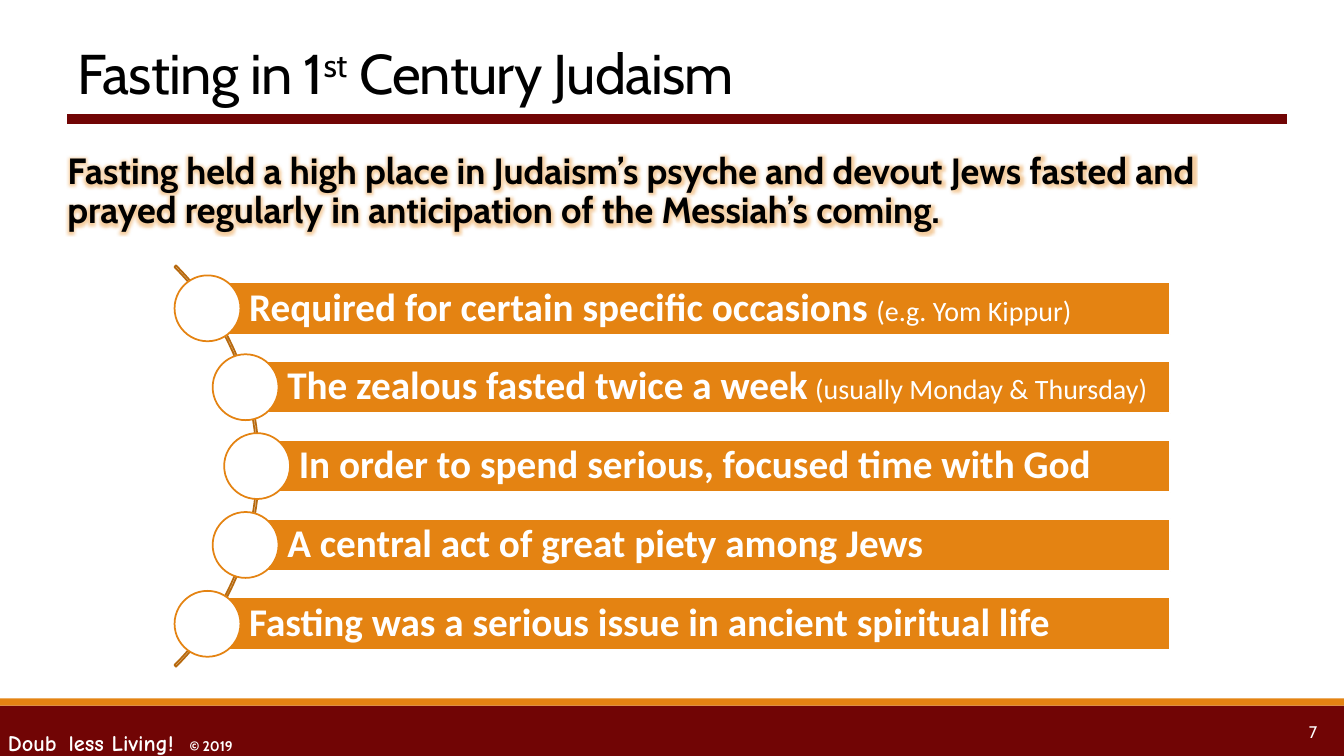
from lxml import etree
from pptx import Presentation
from pptx.dml.color import RGBColor
from pptx.enum.shapes import MSO_CONNECTOR, MSO_SHAPE
from pptx.enum.text import MSO_ANCHOR, PP_ALIGN
from pptx.oxml.ns import qn
from pptx.util import Cm, Pt

RECTANGLE, OVAL, ARC = MSO_SHAPE.RECTANGLE, MSO_SHAPE.OVAL, MSO_SHAPE.BLOCK_ARC
STRAIGHT = MSO_CONNECTOR.STRAIGHT
TOP, MIDDLE, BOTTOM = MSO_ANCHOR.TOP, MSO_ANCHOR.MIDDLE, MSO_ANCHOR.BOTTOM
LEFT, RIGHT = PP_ALIGN.LEFT, PP_ALIGN.RIGHT

MAROON, ORANGE, BROWN = "710505", "E48312", "B7690E"
WHITE, BLACK = "FFFFFF", "000000"
SLIDE_WIDTH, SLIDE_HEIGHT = 33.87, 19.05

# Each practice: bold statement, size of the gap, smaller remark
PRACTICES = [
    ("Required for certain specific occasions", 28, "(e.g. Yom Kippur)"),
    ("The zealous fasted twice a week", 24, "(usually Monday & Thursday)"),
    ("In order to spend serious, focused time with God", None, None),
    ("A central act of great piety among Jews", None, None),
    ("Fasting was a serious issue in ancient spiritual life", None, None),
]
CURVE_OFFSETS = [0, 0.96, 1.25, 0.96, 0]


def color(hex_string):
    return RGBColor.from_string(hex_string)


def add_shape(slide, kind, box, fill=None, line=None):
    shape = slide.shapes.add_shape(kind, *map(Cm, box))
    shape.shadow.inherit = False
    if fill:
        shape.fill.solid()
        shape.fill.fore_color.rgb = color(fill)
    else:
        shape.fill.background()
    if line:
        shape.line.color.rgb = color(line)
        shape.line.width = Pt(1.25)
    else:
        shape.line.fill.background()
    return shape


def format_frame(shape, anchor, margins=(0.25, 0.13, 0.25, 0.13)):
    """Set anchor and margins (left, top, right, bottom); return the first paragraph."""
    frame = shape.text_frame
    frame.word_wrap = True
    frame.vertical_anchor = anchor
    (frame.margin_left, frame.margin_top,
     frame.margin_right, frame.margin_bottom) = map(Cm, margins)
    return frame.paragraphs[0]


def set_font(paragraph, name, size, font_color, bold=False, align=LEFT, spacing=1.0):
    paragraph.alignment = align
    paragraph.line_spacing = spacing
    font = paragraph.font
    font.name, font.size, font.bold = name, Pt(size), bold
    font.color.rgb = color(font_color)


def add_run(paragraph, text, size=None, bold=None, name=None):
    run = paragraph.add_run()
    run.text = text
    run.font.size = Pt(size) if size else None
    run.font.bold = bold
    run.font.name = name
    return run


def add_text_box(slide, box, anchor, **frame_options):
    return format_frame(slide.shapes.add_textbox(*map(Cm, box)), anchor, **frame_options)


def add_glow(run, glow_color, radius, opacity):
    effects = etree.SubElement(run.font._element, qn("a:effectLst"))
    glow = etree.SubElement(effects, qn("a:glow"), rad=str(Pt(radius)))
    tint = etree.SubElement(glow, qn("a:srgbClr"), val=glow_color)
    etree.SubElement(tint, qn("a:alpha"), val=str(opacity * 1000))


def add_tab_stop(paragraph, position):
    stops = etree.SubElement(paragraph._p.get_or_add_pPr(), qn("a:tabLst"))
    etree.SubElement(stops, qn("a:tab"), pos=str(Cm(position)), algn="l")


def add_footer(slide, box):
    left, top, width, height = box
    stripe = 0.18
    add_shape(slide, RECTANGLE, (left, top + stripe, width, height - stripe), MAROON)
    add_shape(slide, RECTANGLE, (left, top, width, stripe), ORANGE)

    credit = add_text_box(slide, (left - 0.05, top + 0.36, 9.96, 1.27), TOP)
    add_tab_stop(credit, 4.58)
    set_font(credit, "Comic Neue", 16, WHITE, bold=True)
    add_run(credit, "Doub")
    add_run(credit, " ", 24)
    add_run(credit, "less Living!\t")
    add_run(credit, "© 2019", 10, name="Cabin")

    number = add_text_box(slide, (left + width - 3.85, top + 0.33, 3.43, 1.02), MIDDLE)
    set_font(number, "Cabin", 12, WHITE, align=RIGHT)
    add_run(number, "7")


def add_heading(slide, box):
    left, top, width, height = box
    rule_top = top + height + 0.2
    rule = slide.shapes.add_connector(
        STRAIGHT, Cm(left), Cm(rule_top), Cm(left + width + 0.25), Cm(rule_top))
    rule.line.color.rgb = color(MAROON)
    rule.line.width = Pt(7.5)
    etree.SubElement(rule._element.spPr, qn("a:effectLst"))

    title = add_text_box(slide, box, BOTTOM)
    set_font(title, "Cabin", 40, BLACK, spacing=0.85)
    for text, baseline in (("Fasting in 1", 0), ("st", 30), (" Century Judaism", 0)):
        properties = add_run(title, text).font._element
        properties.set("spc", "-50")
        properties.set("baseline", str(baseline * 1000))


def add_summary(slide, box):
    summary = add_text_box(slide, box, TOP, margins=(0, 0.13, 0, 0.13))
    set_font(summary, "Cabin", 26, BLACK, bold=True, spacing=0.9)
    run = add_run(summary, "Fasting held a high place in Judaism’s psyche and devout Jews "
                           "fasted and prayed regularly in anticipation of the Messiah’s coming.")
    add_glow(run, ORANGE, radius=8, opacity=40)


def add_practice(slide, box, practice):
    """Draw one bar with a circle centred on its left edge."""
    left, top, width, height = box
    statement, gap_size, remark = practice
    bar = add_shape(slide, RECTANGLE, box, ORANGE, WHITE)
    paragraph = format_frame(bar, MIDDLE, margins=(1.05, 0.2, 0.2, 0.2))
    set_font(paragraph, "Calibri", 28, WHITE, bold=True, spacing=0.9)
    add_run(paragraph, statement)
    if remark:
        add_run(paragraph, " ", gap_size, False)
        add_run(paragraph, remark, 20, False)

    diameter = 1.66
    circle_top = top + (height - diameter) / 2
    add_shape(slide, OVAL, (left - diameter / 2, circle_top, diameter, diameter), WHITE, ORANGE)


def add_practice_list(slide, box):
    left, top, width, height = box
    arc_size, bar_height = 14.3, 1.32
    arc_box = (left - 13, top + (height - arc_size) / 2, arc_size, arc_size)
    arc = add_shape(slide, ARC, arc_box, line=BROWN)
    for index, value in enumerate((189, 27, 0.004)):
        arc.adjustments[index] = value

    pitch = (height - bar_height) / (len(PRACTICES) - 1)
    for index, (practice, offset) in enumerate(zip(PRACTICES, CURVE_OFFSETS)):
        bar_box = (left + offset, top + index * pitch, width - offset, bar_height)
        add_practice(slide, bar_box, practice)


def main():
    presentation = Presentation()
    presentation.slide_width, presentation.slide_height = Cm(SLIDE_WIDTH), Cm(SLIDE_HEIGHT)
    slide = presentation.slides.add_slide(presentation.slide_layouts[6])
    add_footer(slide, (0, 17.6, SLIDE_WIDTH, 1.45))
    add_heading(slide, (1.7, 0.46, 30.48, 2.34))
    add_summary(slide, (1.7, 3.73, 30.48, 2.59))
    add_practice_list(slide, (5.23, 7.11, 24.26, 9.27))
    presentation.save("out.pptx")


if __name__ == "__main__":
    main()
